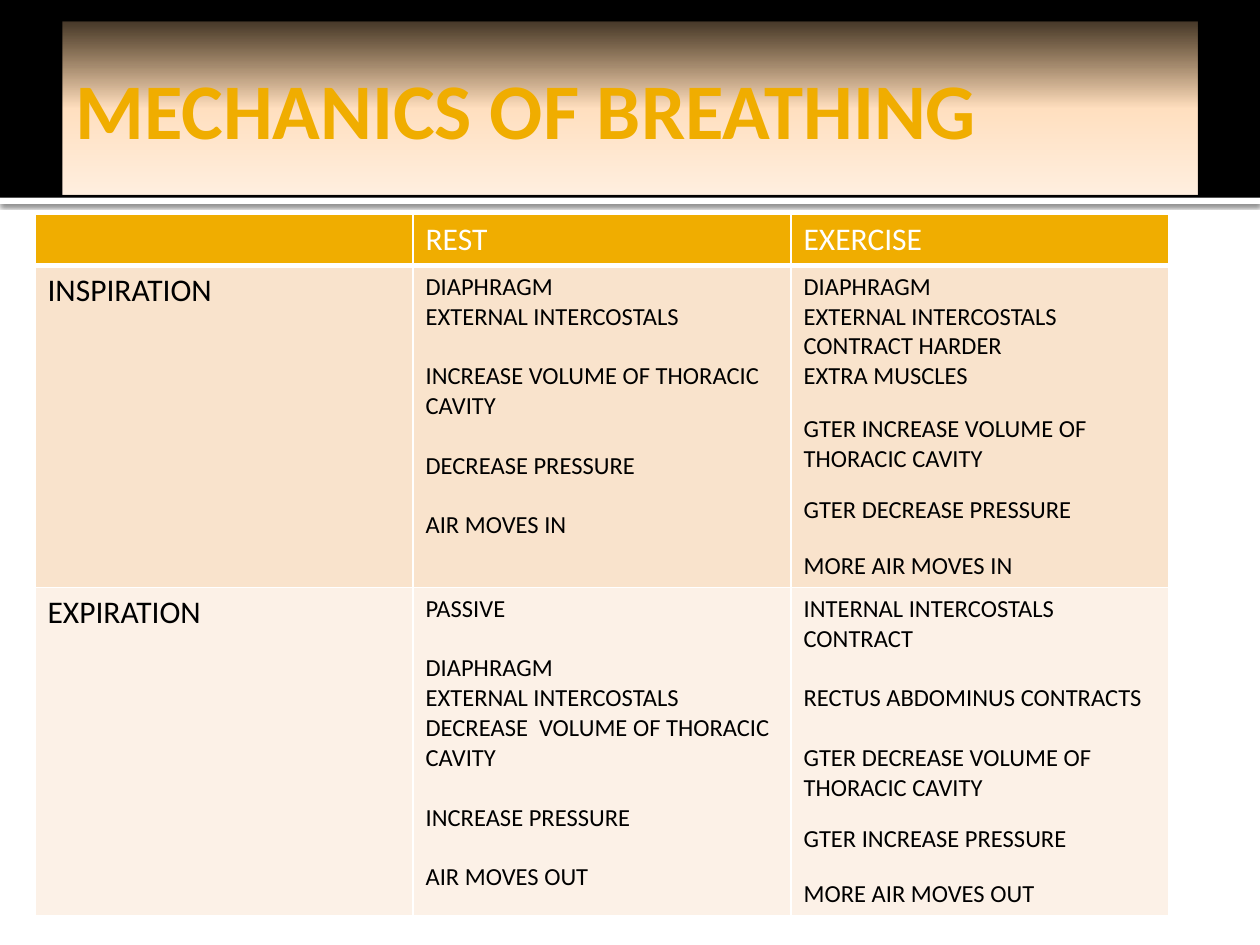
from dataclasses import dataclass

from lxml.etree import SubElement
from pptx import Presentation
from pptx.dml.color import RGBColor
from pptx.enum.shapes import MSO_SHAPE as Preset
from pptx.enum.text import MSO_ANCHOR as Anchor, PP_ALIGN as Align
from pptx.oxml import parse_xml
from pptx.oxml.ns import nsdecls, qn
from pptx.util import Pt


@dataclass(frozen=True)
class Theme:
    font: str = "Calibri"
    gold: str = "F0AD00"
    black: str = "000000"
    white: str = "FFFFFF"
    bands: tuple = ("F9E3CC", "FCF1E7")
    title_fade: tuple = ((0, "FFCF96", 27), (50, "FFDFBF", 100), (100, "FFEFE0", 100))
    title_size: int = 45
    label_size: int = 18
    body_size: int = 14
    line_ratio: float = 1.22


THEME = Theme()
HEADINGS = ("", "REST", "EXERCISE")
ROWS = (
    ("INSPIRATION",
     ((0, "DIAPHRAGM"), (0, "EXTERNAL INTERCOSTALS"),
      (14, "INCREASE VOLUME OF THORACIC CAVITY"),
      (14, "DECREASE PRESSURE"), (14, "AIR MOVES IN")),
     ((0, "DIAPHRAGM"), (0, "EXTERNAL INTERCOSTALS CONTRACT HARDER"),
      (0, "EXTRA MUSCLES"), (11, "GTER INCREASE VOLUME OF THORACIC CAVITY"),
      (10, "GTER DECREASE PRESSURE"), (12, "MORE AIR MOVES IN"))),
    ("EXPIRATION",
     ((0, "PASSIVE"), (14, "DIAPHRAGM"), (0, "EXTERNAL INTERCOSTALS"),
      (0, "DECREASE  VOLUME OF THORACIC CAVITY"),
      (14, "INCREASE PRESSURE"), (14, "AIR MOVES OUT")),
     ((0, "INTERNAL INTERCOSTALS CONTRACT"), (14, "RECTUS ABDOMINUS CONTRACTS"),
      (14, "GTER DECREASE VOLUME OF THORACIC CAVITY"),
      (10, "GTER INCREASE PRESSURE"), (12, "MORE AIR MOVES OUT"))),
)
ROW_HEIGHTS = (29.2, 184, 187)


def set_font(para, size, color, bold=False):
    para.font.name = THEME.font
    para.font.size = Pt(size)
    para.font.bold = bold
    para.font.color.rgb = RGBColor.from_string(color)


def add_bar(page, box, color):
    bar = page.shapes.add_shape(Preset.RECTANGLE, *map(Pt, box))
    bar.shadow.inherit = False
    bar.line.fill.background()
    bar.fill.solid()
    bar.fill.fore_color.rgb = RGBColor.from_string(color)
    return bar


def add_backdrop(page, box):
    left, top, width, height = box
    strip = add_bar(page, (left, top + height, width, 3.6), THEME.white)
    effects = strip._element.spPr.find(qn("a:effectLst"))
    shadow = SubElement(effects, qn("a:outerShdw"), blurRad=str(Pt(2.5)),
                        dist=str(Pt(0.8)), dir="5400000", algn="t", rotWithShape="0")
    tint = SubElement(shadow, qn("a:srgbClr"), val=THEME.black)
    SubElement(tint, qn("a:alpha"), val="60000")
    add_bar(page, box, THEME.black)


def add_title(page, box, text):
    title = add_bar(page, box, THEME.white)
    stops = "".join(
        f'<a:gs pos="{place * 1000}"><a:srgbClr val="{color}">'
        f'<a:alpha val="{opacity * 1000}"/></a:srgbClr></a:gs>'
        for place, color, opacity in THEME.title_fade)
    fade = parse_xml(f'<a:gradFill {nsdecls("a")} rotWithShape="1"><a:gsLst>{stops}'
                     '</a:gsLst><a:lin ang="5400000" scaled="0"/></a:gradFill>')
    properties = title._element.spPr
    properties.replace(properties.find(qn("a:solidFill")), fade)
    frame = title.text_frame
    frame.word_wrap = True
    frame.vertical_anchor = Anchor.MIDDLE
    frame.margin_left = Pt(7.2)
    frame.margin_right = frame.margin_top = frame.margin_bottom = Pt(3.6)
    para = frame.paragraphs[0]
    para.text = text
    para.alignment = Align.LEFT
    set_font(para, THEME.title_size, THEME.gold, bold=True)


def style_cell(cell, color, bottom=1):
    properties = cell._tc.get_or_add_tcPr()
    for side, width in (("L", 1), ("R", 1), ("T", 1), ("B", bottom)):
        line = SubElement(properties, qn(f"a:ln{side}"), w=str(Pt(width)))
        SubElement(SubElement(line, qn("a:solidFill")), qn("a:srgbClr"), val=THEME.white)
    cell.fill.solid()
    cell.fill.fore_color.rgb = RGBColor.from_string(color)


def write_cell(cell, lines, size, color):
    frame = cell.text_frame
    for index, (gap, text) in enumerate(lines):
        para = frame.add_paragraph() if index else frame.paragraphs[0]
        para.text = text
        para.space_before = Pt(gap * THEME.line_ratio)
        set_font(para, size, color)


def add_comparison(page, box):
    left, top, width = box
    shape = page.shapes.add_table(len(ROWS) + 1, len(HEADINGS), Pt(left), Pt(top),
                                  Pt(width), Pt(sum(ROW_HEIGHTS)))
    table = shape.table
    for row, height in zip(table.rows, ROW_HEIGHTS):
        row.height = Pt(height)
    for cell, heading in zip(table.rows[0].cells, HEADINGS):
        style_cell(cell, THEME.gold, bottom=3)
        write_cell(cell, [(0, heading)], THEME.label_size, THEME.white)
    for number, (label, *details) in enumerate(ROWS, 1):
        cells = list(table.rows[number].cells)
        for cell in cells:
            style_cell(cell, THEME.bands[number - 1])
        write_cell(cells[0], [(0, label)], THEME.label_size, THEME.black)
        for cell, lines in zip(cells[1:], details):
            write_cell(cell, lines, THEME.body_size, THEME.black)


def main():
    deck = Presentation()
    deck.slide_width, deck.slide_height = Pt(720), Pt(540)
    page = deck.slides.add_slide(deck.slide_layouts[6])
    add_backdrop(page, (0, 0, 720, 113))
    add_title(page, (36, 12.2, 648, 98.8), "MECHANICS OF BREATHING")
    add_comparison(page, (20, 122.6, 648))
    deck.save("out.pptx")


if __name__ == "__main__":
    main()
